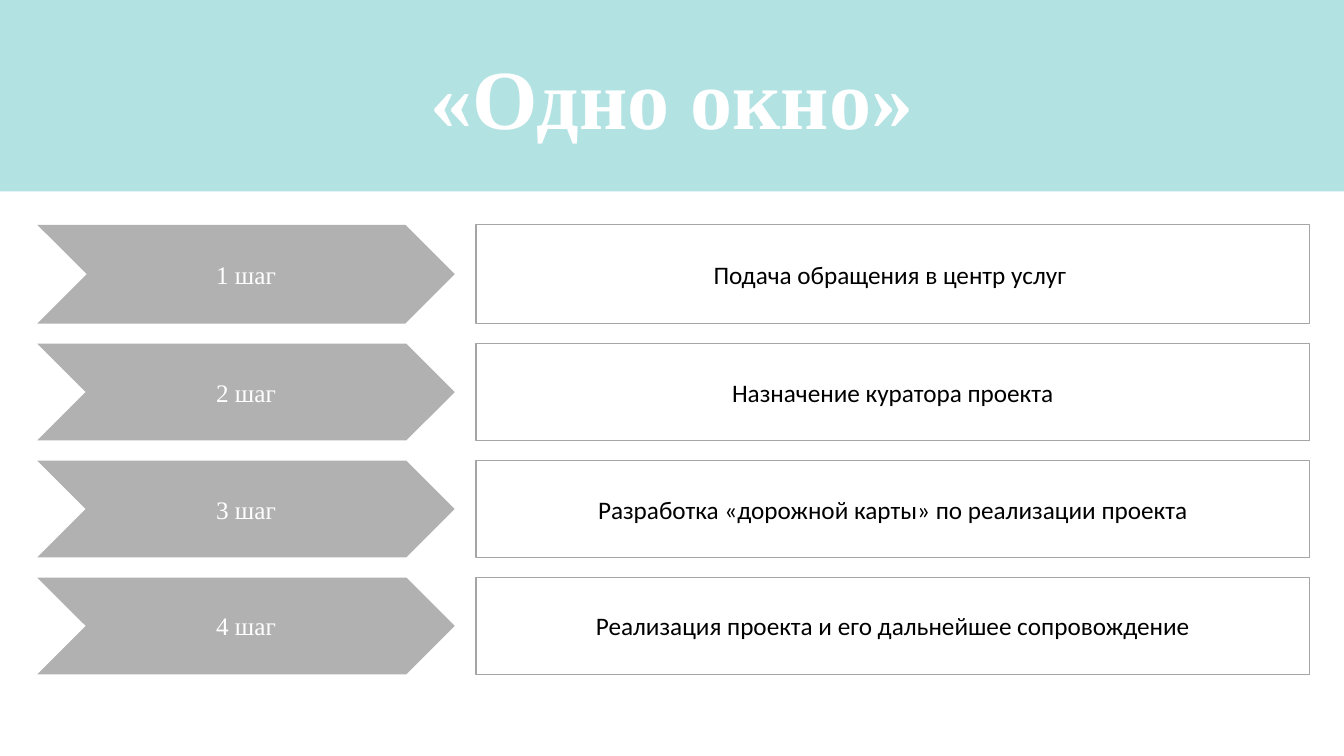
from dataclasses import dataclass

from lxml.etree import SubElement
from pptx import Presentation
from pptx.dml.color import RGBColor as Rgb
from pptx.enum.shapes import MSO_SHAPE as Kind
from pptx.enum.text import MSO_ANCHOR as Anchor, MSO_AUTO_SIZE as Fit, PP_ALIGN as Align
from pptx.oxml.ns import qn
from pptx.util import Inches, Pt


@dataclass(frozen=True)
class Theme:
    band: str = "68C6C8"
    arrow: str = "808080"
    edge: str = "A5A5A5"
    white: str = "FFFFFF"
    black: str = "000000"
    serif: str = "Times New Roman"
    sans: str = "Calibri"
    head: int = 60
    body: int = 18


THEME = Theme()
WIDE, HIGH = 13.33, 7.5
GAP = 0.2
STEPS = [
    ("Подача обращения в центр услуг ", 0.98),
    ("Назначение куратора проекта", 0.96),
    ("Разработка «дорожной карты» по реализации проекта", 0.96),
    ("Реализация проекта и его дальнейшее сопровождение", 0.96),
]


def paint(shape, color, alpha=100):
    """Fill a shape, with its opacity in percent."""
    shape.fill.solid()
    shape.fill.fore_color.rgb = Rgb.from_string(color)
    if alpha < 100:
        tone = shape.fill._xPr.find(".//" + qn("a:srgbClr"))
        SubElement(tone, qn("a:alpha"), val=str(alpha * 1000))


def write(shape, text, font=THEME.sans, size=THEME.body, color=THEME.black, bold=False):
    """Put one centred line of text into a shape."""
    frame = shape.text_frame
    frame.word_wrap = True
    frame.auto_size = Fit.NONE
    frame.vertical_anchor = Anchor.MIDDLE
    para = frame.paragraphs[0]
    para.alignment = Align.CENTER
    run = para.add_run()
    run.text = text
    run.font.name = font
    run.font.size = Pt(size)
    run.font.bold = bold
    run.font.color.rgb = Rgb.from_string(color)


def block(slide, kind, left, top, width, height):
    """Add a preset shape without shadow or outline."""
    shape = slide.shapes.add_shape(
        kind, Inches(left), Inches(top), Inches(width), Inches(height))
    shape.shadow.inherit = False
    shape.line.fill.background()
    return shape


def banner(slide, left, top, width, height):
    """Title on a tinted band."""
    title = slide.shapes.title
    title.left, title.top = Inches(left), Inches(top)
    title.width, title.height = Inches(width), Inches(height)
    paint(title, THEME.band, 50)
    write(title, "«Одно окно»", font=THEME.serif, size=THEME.head,
          color=THEME.white, bold=True)


def step(slide, label, text, left, top, width, height):
    """Chevron with the step number, and its description to the right."""
    tip, start = 4.14, 4.35
    arrow = block(slide, Kind.CHEVRON, left, top, tip, height)
    paint(arrow, THEME.arrow, 61)
    write(arrow, label, font=THEME.serif, color=THEME.white)

    card = block(slide, Kind.RECTANGLE, left + start, top, width - start, height)
    paint(card, THEME.white)
    card.line.color.rgb = Rgb.from_string(THEME.edge)
    card.line.width = Pt(1)
    write(card, text)


def steps(slide, left, top, width):
    """Stack the steps with equal gaps."""
    for num, (text, height) in enumerate(STEPS, 1):
        step(slide, f"{num} шаг", text, left, top, width, height)
        top += height + GAP


def main():
    deck = Presentation()
    deck.slide_width, deck.slide_height = Inches(WIDE), Inches(HIGH)
    slide = deck.slides.add_slide(deck.slide_layouts[5])
    banner(slide, 0, 0, WIDE, 1.9)
    steps(slide, 0.37, 2.23, 12.62)
    deck.save("out.pptx")


if __name__ == "__main__":
    main()
